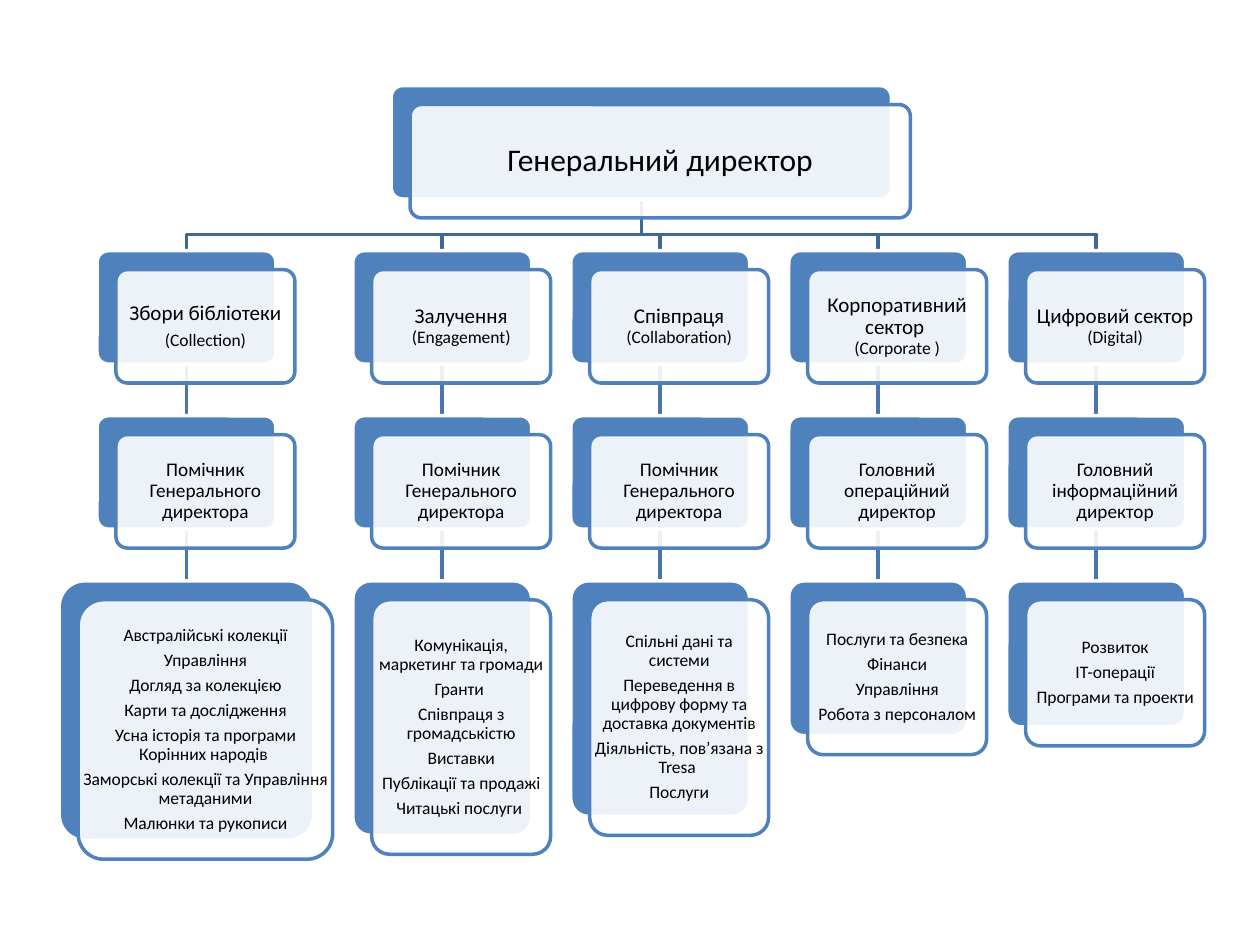
from pptx import Presentation
from pptx.dml.color import RGBColor
from pptx.enum.shapes import MSO_CONNECTOR, MSO_SHAPE
from pptx.enum.text import MSO_ANCHOR, PP_ALIGN
from pptx.oxml.ns import qn
from pptx.util import Inches, Pt
from lxml import etree

ROUND = MSO_SHAPE.ROUNDED_RECTANGLE
STRAIGHT = MSO_CONNECTOR.STRAIGHT
MIDDLE = MSO_ANCHOR.MIDDLE
CENTER = PP_ALIGN.CENTER

COLORS = {"blue": "4F81BD", "white": "FFFFFF", "text": "000000",
          "branch": "3F6797", "link": "4875AC"}
TOPS = {"root": 0.68, "sector": 1.99, "chief": 3.3, "units": 4.61}
HIGH, WIDE, SHIFT = 0.9, 1.42, 0.15
ROOT_X, ROOT_WIDE = 5.09, 3.97
BUS_Y = 1.86
FIRST_X, NEXT_X, STEP = 1.48, 3.51, 1.73

AIDE = "Помічник Генерального директора"
SECTORS = [
    (["Збори бібліотеки", "(Collection)"], AIDE, 2.02, 2.06, [
        "Австралійські колекції", "Управління", "Догляд за колекцією",
        "Карти та дослідження", "Усна історія та програми Корінних народів ",
        "Заморські колекції та Управління метаданими",
        "Малюнки та рукописи"]),
    (["Залучення |(Engagement)"], AIDE, WIDE, 2.02, [
        "Комунікація, маркетинг та громади", "Гранти ",
        "Співпраця з громадськістю", "Виставки", "Публікації та продажі",
        "Читацькі послуги "]),
    (["Співпраця |(Collaboration)"], AIDE, WIDE, 1.87, [
        "Спільні дані та системи",
        "Переведення в цифрову форму та доставка документів",
        "Діяльність, пов’язана з Tresa ", "Послуги"]),
    (["Корпоративний сектор \n|(Corporate )"],
     "Головний операційний директор", WIDE, 1.23, [
        "Послуги та безпека", "Фінанси", "Управління",
        "Робота з персоналом"]),
    (["Цифровий сектор |(Digital)"],
     "Головний інформаційний директор", WIDE, 1.16, [
        "Розвиток", "ІТ-операції", "Програми та проекти"]),
]


class Chart:
    """Draws the parts of an organisation chart on one slide."""

    def __init__(self, slide, font="Calibri"):
        self.shapes = slide.shapes
        self.font = font

    def color(self, name):
        return RGBColor.from_string(COLORS[name])

    def stroke(self, shape, name):
        shape.line.color.rgb = self.color(name)
        shape.line.width = Pt(2)

    def link(self, x, top, end):
        line = self.shapes.add_connector(
            STRAIGHT, Inches(x), Inches(top), Inches(x), Inches(end))
        self.stroke(line, "link")
        etree.SubElement(line._element.spPr, qn("a:effectLst"))

    def branch(self, points):
        spots = [(Inches(x), Inches(y)) for x, y in points]
        path = self.shapes.build_freeform(*spots[0])
        path.add_line_segments(spots[1:], close=False)
        shape = path.convert_to_shape()
        shape.shadow.inherit = False
        shape.fill.background()
        self.stroke(shape, "branch")

    def panel(self, x, y, wide, high, fill, line):
        shape = self.shapes.add_shape(
            ROUND, Inches(x), Inches(y), Inches(wide), Inches(high))
        shape.adjustments[0] = 0.1
        shape.shadow.inherit = False
        shape.fill.solid()
        shape.fill.fore_color.rgb = self.color(fill)
        self.stroke(shape, line)
        return shape

    def card(self, mid, y, wide, high, lines, size, inset):
        x = mid - wide / 2
        self.panel(x, y, wide, high, "blue", "white")
        x, y = x + SHIFT, y + SHIFT
        front = self.panel(x, y, wide, high, "white", "blue")
        tint = front._element.spPr.find(qn("a:solidFill"))[0]
        etree.SubElement(tint, qn("a:alpha"), val="90000")
        self.label(x, y, wide, high, lines, size, inset)

    def label(self, x, y, wide, high, lines, size, inset):
        box = self.shapes.add_textbox(
            Inches(x), Inches(y), Inches(wide), Inches(high))
        frame = box.text_frame
        frame.word_wrap = True
        frame.vertical_anchor = MIDDLE
        frame.margin_left = frame.margin_right = Inches(inset)
        frame.margin_top = frame.margin_bottom = Inches(inset)
        frame.text = "\n".join([""] * len(lines))
        for para, line in zip(frame.paragraphs, lines):
            para.alignment = CENTER
            para.line_spacing = 0.9
            para.space_after = Pt(size * 0.35)
            for part in line.split("|"):
                self.run(para, part, 10 if part.startswith("(") else size)

    def run(self, para, part, size):
        run = para.add_run()
        run.text = part.rstrip("\n")
        run.font.name = self.font
        run.font.size = Pt(size)
        run.font.color.rgb = self.color("text")
        if part.endswith("\n"):
            para.add_line_break()
            etree.SubElement(para._p[-1], qn("a:rPr"), sz=str(size * 100))


def main():
    deck = Presentation()
    deck.slide_width, deck.slide_height = Inches(10), Inches(7.5)
    chart = Chart(deck.slides.add_slide(deck.slide_layouts[6]))
    mids = [FIRST_X] + [NEXT_X + STEP * i for i in range(len(SECTORS) - 1)]

    for mid in mids:
        chart.branch([(ROOT_X, TOPS["root"] + HIGH), (ROOT_X, BUS_Y),
                      (mid, BUS_Y), (mid, TOPS["sector"])])
        for top, end in (("sector", "chief"), ("chief", "units")):
            chart.link(mid, TOPS[top] + HIGH, TOPS[end])

    chart.card(ROOT_X, TOPS["root"], ROOT_WIDE, HIGH,
               ["Генеральний директор"], 18, 0.07)
    for mid, (name, chief, wide, high, units) in zip(mids, SECTORS):
        chart.card(mid, TOPS["sector"], WIDE, HIGH, name, 12, 0.05)
        chart.card(mid, TOPS["chief"], WIDE, HIGH, [chief], 11, 0.05)
        chart.card(mid, TOPS["units"], wide, high, units, 10, 0.04)
    deck.save("out.pptx")


if __name__ == "__main__":
    main()
